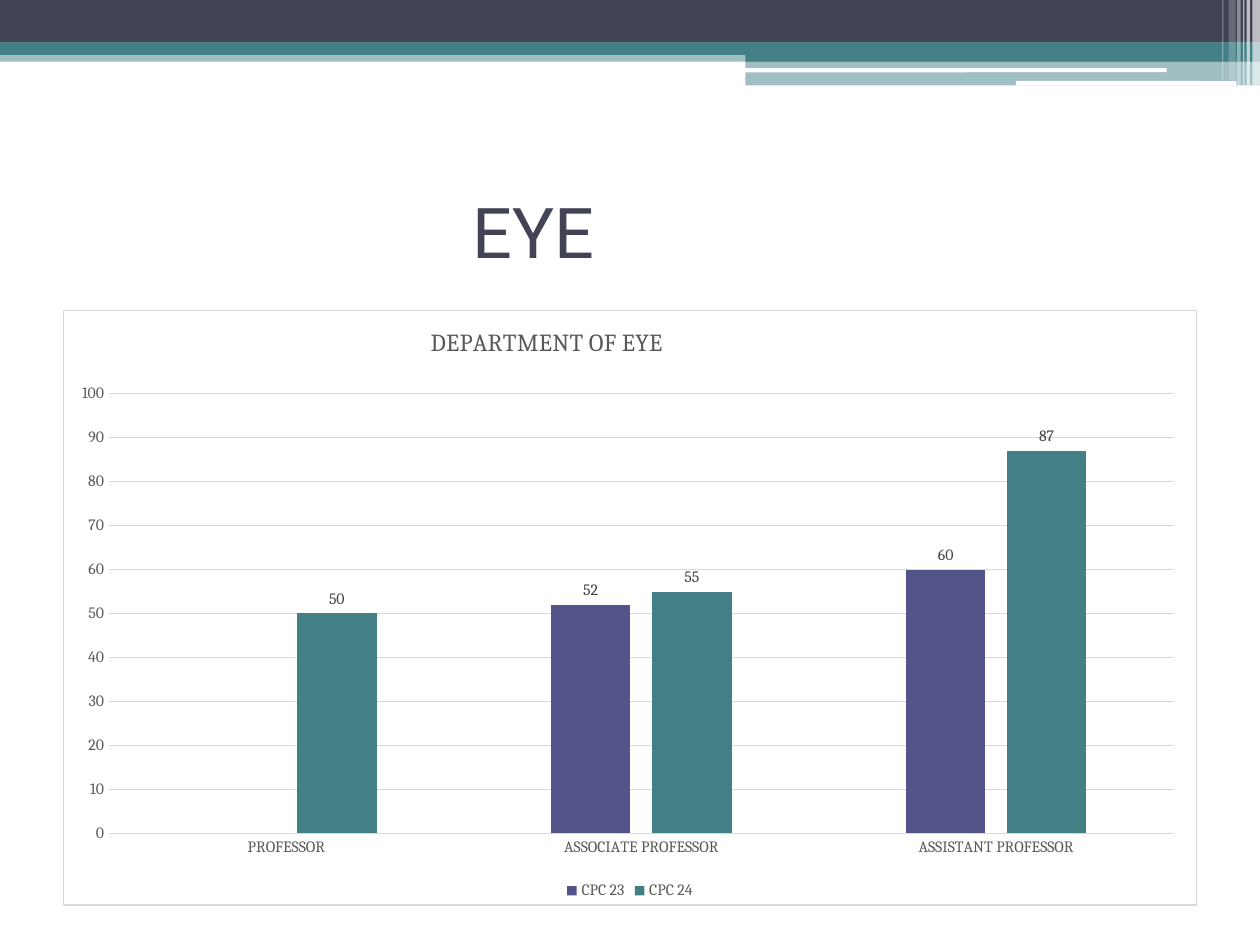
from dataclasses import dataclass

from lxml.etree import SubElement
from pptx import Presentation
from pptx.chart.data import CategoryChartData
from pptx.dml.color import RGBColor
from pptx.enum.chart import XL_CHART_TYPE, XL_LABEL_POSITION, XL_LEGEND_POSITION, XL_TICK_MARK
from pptx.enum.shapes import MSO_SHAPE
from pptx.enum.text import MSO_ANCHOR
from pptx.oxml import parse_xml
from pptx.oxml.ns import nsdecls, qn
from pptx.util import Pt


@dataclass(frozen=True)
class Theme:
    navy: str = "424456"
    teal: str = "438086"
    violet: str = "53548A"
    white: str = "FFFFFF"
    rule: str = "D9D9D9"
    muted: str = "595959"
    label: str = "404040"
    heading_font: str = "Roboto"
    chart_font: str = "Cambria"
    heading_size: int = 40
    chart_title_size: int = 14
    chart_size: int = 9


THEME = Theme()

# left, top, width, height, colour, opacity in percent
BANDS = [
    (0, 28.8, 720, 6.5, THEME.teal, 50),
    (0, 0, 720, 24.4, THEME.navy, 100),
    (0, 24.2, 720, 7.2, THEME.teal, 100),
    (426, 28, 294, 7.2, THEME.teal, 100),
    (426, 34.9, 294, 14, THEME.teal, 50),
]
SLOTS = [(425.5, 38.9, 241.2, 2.4), (580.5, 46.3, 126, 2.7)]

# left, width, height, opacity in percent
STRIPES = [
    (715.6, 4.4, 49, 65),
    (712.3, 2, 49, 65),
    (710.4, 0.7, 49, 60),
    (706.9, 2, 49, 40),
    (702.1, 4, 46, 20),
    (698.4, 0.7, 46, 30),
]


def add_block(slide, left, top, width, height, color, opacity=100, kind=MSO_SHAPE.RECTANGLE):
    block = slide.shapes.add_shape(kind, Pt(left), Pt(top), Pt(width), Pt(height))
    block.shadow.inherit = False
    block.line.fill.background()
    block.fill.solid()
    block.fill.fore_color.rgb = RGBColor.from_string(color)
    if opacity < 100:
        srgb = block.fill._xPr.find(qn("a:solidFill")).find(qn("a:srgbClr"))
        SubElement(srgb, qn("a:alpha"), val=str(opacity * 1000))


def add_header(slide):
    for band in BANDS:
        add_block(slide, *band)
    for slot in SLOTS:
        add_block(slide, *slot, THEME.white, kind=MSO_SHAPE.ROUNDED_RECTANGLE)
    for left, width, height, opacity in STRIPES:
        add_block(slide, left, 0, width, height, THEME.white, opacity)


def style_font(font, size, color, name=THEME.chart_font):
    font.name = name
    font.size = Pt(size)
    font.bold = False
    font.color.rgb = RGBColor.from_string(color)


def add_heading(slide, text):
    heading = slide.shapes.add_textbox(Pt(36), Pt(90), Pt(648), Pt(84)).text_frame
    heading.word_wrap = True
    heading.vertical_anchor = MSO_ANCHOR.MIDDLE
    heading.margin_left = Pt(234)
    heading.text = text
    style_font(heading.paragraphs[0].font, THEME.heading_size, THEME.navy, THEME.heading_font)


def set_layout(element, predecessor, **fractions):
    """Place a chart part by fractions of the chart area."""
    for old in element.findall(qn("c:layout")):
        element.remove(old)
    target = '<c:layoutTarget val="inner"/>' if "w" in fractions else ""
    modes = "".join(f'<c:{key}Mode val="edge"/>' for key in ("x", "y"))
    values = "".join(f'<c:{key} val="{value}"/>' for key, value in fractions.items())
    layout = parse_xml(
        f'<c:layout {nsdecls("c")}><c:manualLayout>{target}{modes}{values}'
        "</c:manualLayout></c:layout>"
    )
    if predecessor is None:
        element.insert(0, layout)
    else:
        predecessor.addnext(layout)


def frame_chart(chart):
    chart_space = chart._chartSpace
    chart_space.find(qn("c:chart")).addnext(parse_xml(
        f'<c:spPr {nsdecls("c", "a")}>'
        f'<a:solidFill><a:srgbClr val="{THEME.white}"/></a:solidFill>'
        f'<a:ln w="{Pt(0.75)}"><a:solidFill><a:srgbClr val="{THEME.rule}"/></a:solidFill></a:ln>'
        "</c:spPr>"
    ))


def draw_rule(line):
    line.width = Pt(0.75)
    line.color.rgb = RGBColor.from_string(THEME.rule)


def style_axes(chart):
    posts, score = chart.category_axis, chart.value_axis
    for axis in (posts, score):
        axis.major_tick_mark = axis.minor_tick_mark = XL_TICK_MARK.NONE
        style_font(axis.tick_labels.font, THEME.chart_size, THEME.muted)
    draw_rule(posts.format.line)
    score.format.line.fill.background()
    score.minimum_scale, score.maximum_scale, score.major_unit = 0, 100, 10
    draw_rule(score.major_gridlines.format.line)


def style_columns(plot):
    plot.gap_width, plot.overlap = 219, -27
    plot.vary_by_categories = False
    for series, color in zip(plot.series, (THEME.violet, THEME.teal)):
        series.format.fill.solid()
        series.format.fill.fore_color.rgb = RGBColor.from_string(color)
        labels = series.data_labels
        labels.show_value = True
        labels.position = XL_LABEL_POSITION.OUTSIDE_END
        style_font(labels.font, THEME.chart_size, THEME.label)


def add_department_chart(slide):
    scores = CategoryChartData()
    scores.categories = ["PROFESSOR", "ASSOCIATE PROFESSOR", "ASSISTANT PROFESSOR"]
    scores.add_series("CPC 23", (None, 52, 60))
    scores.add_series("CPC 24", (50, 55, 87))
    chart = slide.shapes.add_chart(
        XL_CHART_TYPE.COLUMN_CLUSTERED, Pt(36), Pt(177), Pt(648), Pt(340.5), scores
    ).chart
    style_font(chart.font, THEME.chart_size, THEME.muted)
    frame_chart(chart)

    title = chart.chart_title
    title.text_frame.text = "DEPARTMENT OF EYE"
    style_font(title.text_frame.paragraphs[0].font, THEME.chart_title_size, THEME.muted)
    title.include_in_layout = False
    set_layout(title._element, title._element.find(qn("c:tx")), x=0.32, y=0.02)

    chart.has_legend = True
    chart.legend.position = XL_LEGEND_POSITION.BOTTOM
    chart.legend.include_in_layout = False
    style_font(chart.legend.font, THEME.chart_size, THEME.muted)

    style_axes(chart)
    style_columns(chart.plots[0])
    plot_area = chart._chartSpace.find(qn("c:chart")).find(qn("c:plotArea"))
    set_layout(plot_area, None, x=0.04, y=0.14, w=0.94, h=0.74)


def main():
    presentation = Presentation()
    presentation.slide_width, presentation.slide_height = Pt(720), Pt(540)
    slide = presentation.slides.add_slide(presentation.slide_layouts[6])
    add_header(slide)
    add_heading(slide, "EYE")
    add_department_chart(slide)
    presentation.save("out.pptx")


if __name__ == "__main__":
    main()
